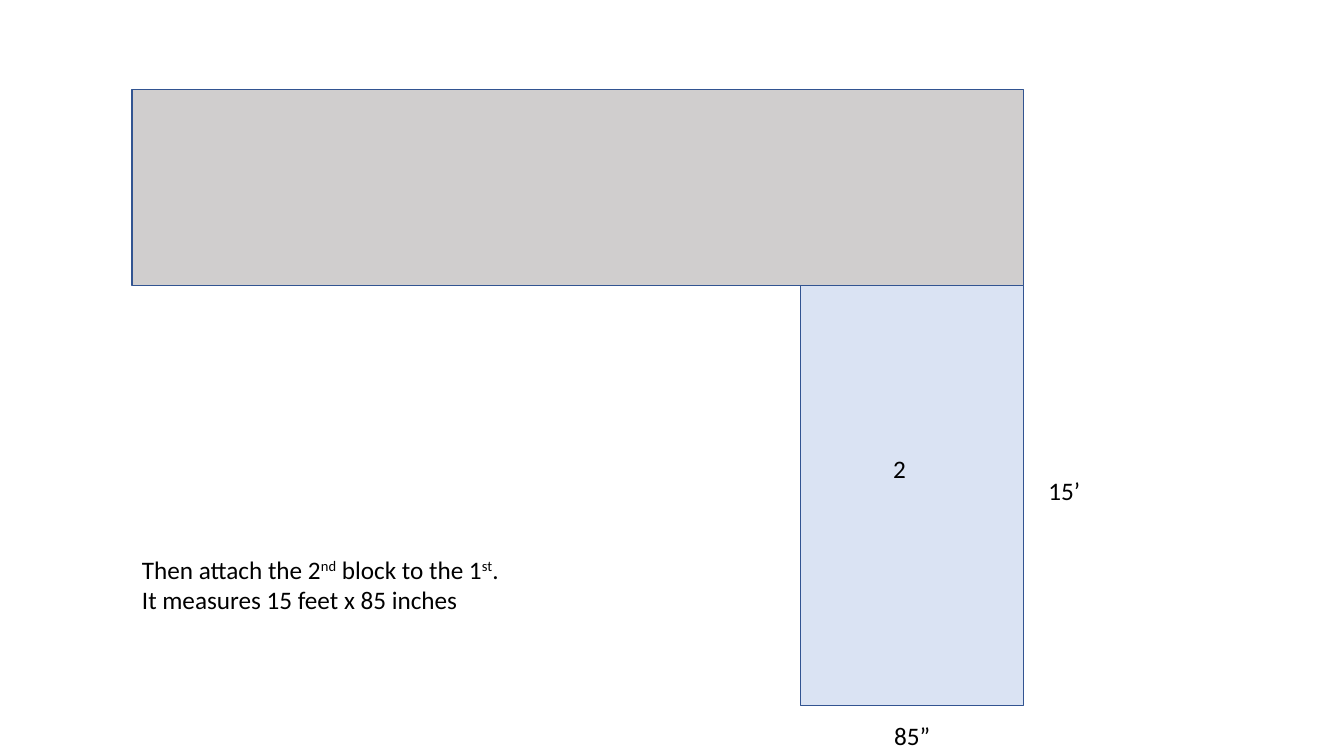
from pptx import Presentation
from pptx.dml.color import RGBColor
from pptx.enum.shapes import MSO_SHAPE as Shape
from pptx.enum.text import MSO_AUTO_SIZE as AutoSize
from pptx.util import Inches, Pt

SUPERSCRIPT = "30000"


def color(hex_string):
    """Turn a hex string into a colour."""
    return RGBColor.from_string(hex_string)


def add_block(group, left, top, width, height, fill):
    """Add one outlined rectangular block to the group."""
    block = group.shapes.add_shape(
        Shape.RECTANGLE, Inches(left), Inches(top), Inches(width), Inches(height))
    block.shadow.inherit = False
    block.fill.solid()
    block.fill.fore_color.rgb = color(fill)
    block.line.color.rgb = color("325491")
    block.line.width = Pt(1)


def add_text(slide, left, top, width, height, lines):
    """Add a text box; each line is a list of runs, every second one raised."""
    box = slide.shapes.add_textbox(
        Inches(left), Inches(top), Inches(width), Inches(height))
    text_frame = box.text_frame
    text_frame.word_wrap = False
    text_frame.auto_size = AutoSize.SHAPE_TO_FIT_TEXT
    for number, line in enumerate(lines):
        paragraph = text_frame.add_paragraph() if number else text_frame.paragraphs[0]
        for position, text in enumerate(line):
            run = paragraph.add_run()
            run.text = text
            run.font.name = "Calibri"
            run.font.size = Pt(18)
            run.font.color.rgb = color("000000")
            if position % 2:
                run._r.get_or_add_rPr().set("baseline", SUPERSCRIPT)


def add_blocks(slide, left, top, width):
    """Draw the first block with the second hanging from its right end."""
    first_height, second_width, second_height = 1.94, 2.21, 4.17
    second_left = left + width - second_width
    second_top = top + first_height
    group = slide.shapes.add_group_shape()
    add_block(group, left, top, width, first_height, "D0CECE")
    add_block(group, second_left, second_top, second_width, second_height, "DAE3F3")
    add_text(slide, second_left + 0.82, second_top + 1.62, 0.32, 0.4, [["2"]])
    add_text(slide, left + width + 0.15, second_top + 1.84, 0.52, 0.4, [["15’"]])
    add_text(slide, second_left + 0.83, second_top + second_height + 0.1,
             0.56, 0.4, [["85”"]])


def add_instruction(slide, left, top, width, height):
    """Write the assembly instruction."""
    add_text(slide, left, top, width, height, [
        ["Then attach the 2", "nd", " block to the 1", "st", "."],
        ["It measures 15 feet x 85 inches"],
    ])


def main():
    """Build and save the slide."""
    presentation = Presentation()
    presentation.slide_width = Inches(13.33)
    presentation.slide_height = Inches(7.5)
    slide = presentation.slides.add_slide(presentation.slide_layouts[6])
    add_blocks(slide, 1.31, 0.89, 8.84)
    add_instruction(slide, 1.31, 5.45, 3.94, 0.71)
    presentation.save("out.pptx")


if __name__ == "__main__":
    main()
